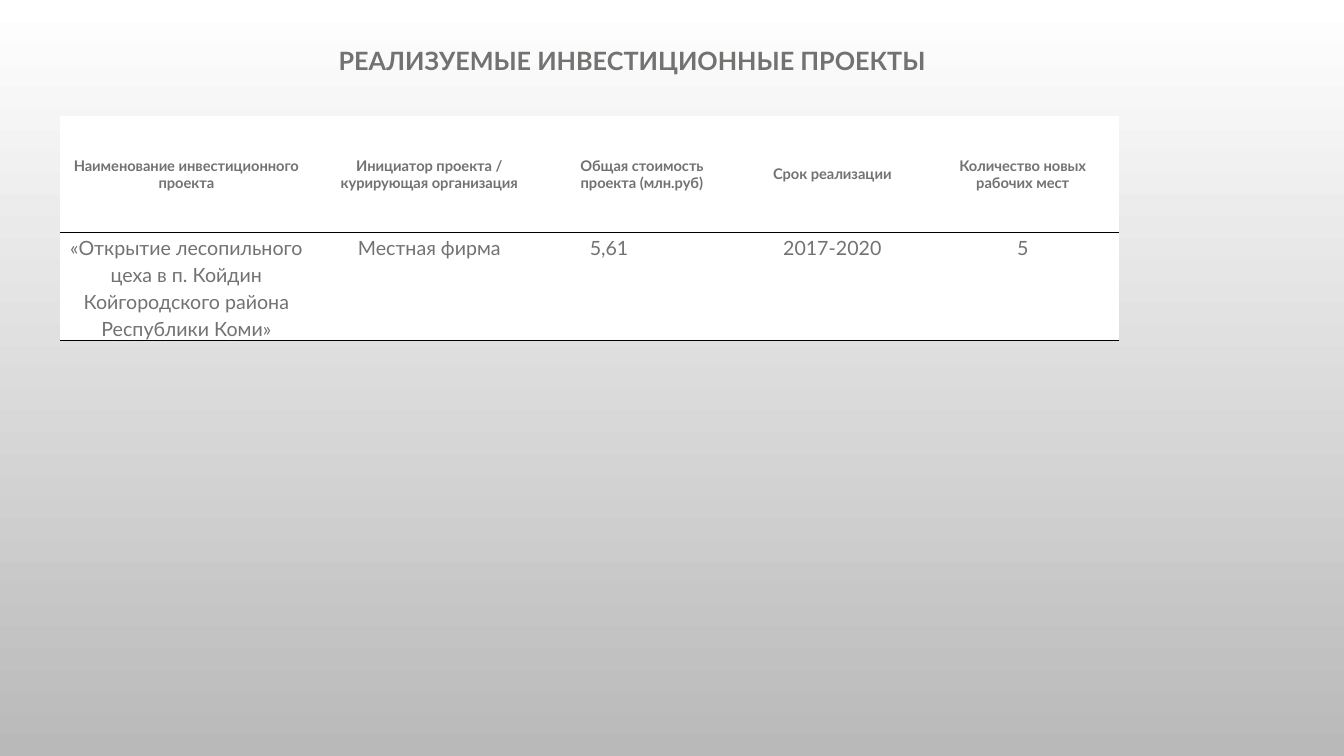
from lxml.etree import SubElement
from pptx import Presentation
from pptx.dml.color import RGBColor
from pptx.enum.text import MSO_ANCHOR as Anchor, MSO_AUTO_SIZE as AutoSize, PP_ALIGN as Align
from pptx.oxml.ns import qn
from pptx.util import Pt

TITLE = "РЕАЛИЗУЕМЫЕ ИНВЕСТИЦИОННЫЕ ПРОЕКТЫ"
HEADINGS = [
    "Наименование инвестиционного проекта",
    "Инициатор проекта / курирующая организация",
    "Общая стоимость проекта (млн.руб)",
    "Срок реализации",
    "Количество новых рабочих мест",
]
PROJECT = [
    "«Открытие лесопильного цеха в п. Койдин Койгородского района Республики Коми»",
    "Местная фирма",
    "5,61",
    "2017-2020",
    "5",
]
COLUMN_WIDTHS = [179.3, 167.8, 136, 136, 136]
ROW_HEIGHTS = [83, 75]
COST_COLUMN = 2
SIDE_MARGIN = 5
COST_RIGHT_MARGIN = 52  # moves the cost left of the column centre

FONT = "Lato"
GREY = RGBColor(0x72, 0x72, 0x71)
WHITE = RGBColor(0xFF, 0xFF, 0xFF)
SILVER = RGBColor(0xB9, 0xB9, 0xB9)
BLACK = RGBColor(0, 0, 0)


def format_paragraph(paragraph, size, bold, spacing):
    paragraph.alignment = Align.CENTER
    paragraph.line_spacing = spacing
    font = paragraph.font
    font.name, font.size, font.bold = FONT, Pt(size), bold
    font.color.rgb = GREY


def add_border(cell, side):
    """Draw a thin black line; side is lnT or lnB. Call before filling the cell."""
    line = SubElement(cell._tc.get_or_add_tcPr(), qn(f"a:{side}"), w=str(Pt(0.75)))
    fill = SubElement(line, qn("a:solidFill"))
    SubElement(fill, qn("a:srgbClr"), val=str(BLACK))


def fill_cell(cell, text, size, bold, spacing):
    cell.text = text
    format_paragraph(cell.text_frame.paragraphs[0], size, bold, spacing)
    cell.fill.solid()
    cell.fill.fore_color.rgb = WHITE


deck = Presentation()
deck.slide_width, deck.slide_height = Pt(960), Pt(540)
slide = deck.slides.add_slide(deck.slide_layouts[5])

backdrop = slide.background.fill
backdrop.gradient()
backdrop.gradient_angle = 270
for stop, color in zip(backdrop.gradient_stops, (WHITE, SILVER)):
    stop.color.rgb = color

title = slide.shapes.title
title.left, title.top, title.width, title.height = Pt(37.5), Pt(31.5), Pt(828), Pt(26.6)
title.text_frame.text = TITLE
title.text_frame.vertical_anchor = Anchor.MIDDLE
title.text_frame.auto_size = AutoSize.SHAPE_TO_FIT_TEXT
format_paragraph(title.text_frame.paragraphs[0], 18, True, 0.9)

projects = slide.shapes.add_table(
    2, len(HEADINGS), Pt(43.5), Pt(83), Pt(sum(COLUMN_WIDTHS)), Pt(sum(ROW_HEIGHTS))
).table
projects.first_row = projects.horz_banding = False
for row, height in zip(projects.rows, ROW_HEIGHTS):
    row.height = Pt(height)

for index, (heading, value, width) in enumerate(zip(HEADINGS, PROJECT, COLUMN_WIDTHS)):
    projects.columns[index].width = Pt(width)

    heading_cell = projects.cell(0, index)
    add_border(heading_cell, "lnB")
    fill_cell(heading_cell, heading, 10.5, True, 1.0)
    heading_cell.vertical_anchor = Anchor.MIDDLE

    value_cell = projects.cell(1, index)
    for side in ("lnT", "lnB"):
        add_border(value_cell, side)
    fill_cell(value_cell, value, 14, False, 1.15)
    value_cell.margin_top = value_cell.margin_bottom = 0
    value_cell.margin_left = Pt(SIDE_MARGIN)
    value_cell.margin_right = Pt(COST_RIGHT_MARGIN if index == COST_COLUMN else SIDE_MARGIN)

deck.save("out.pptx")
